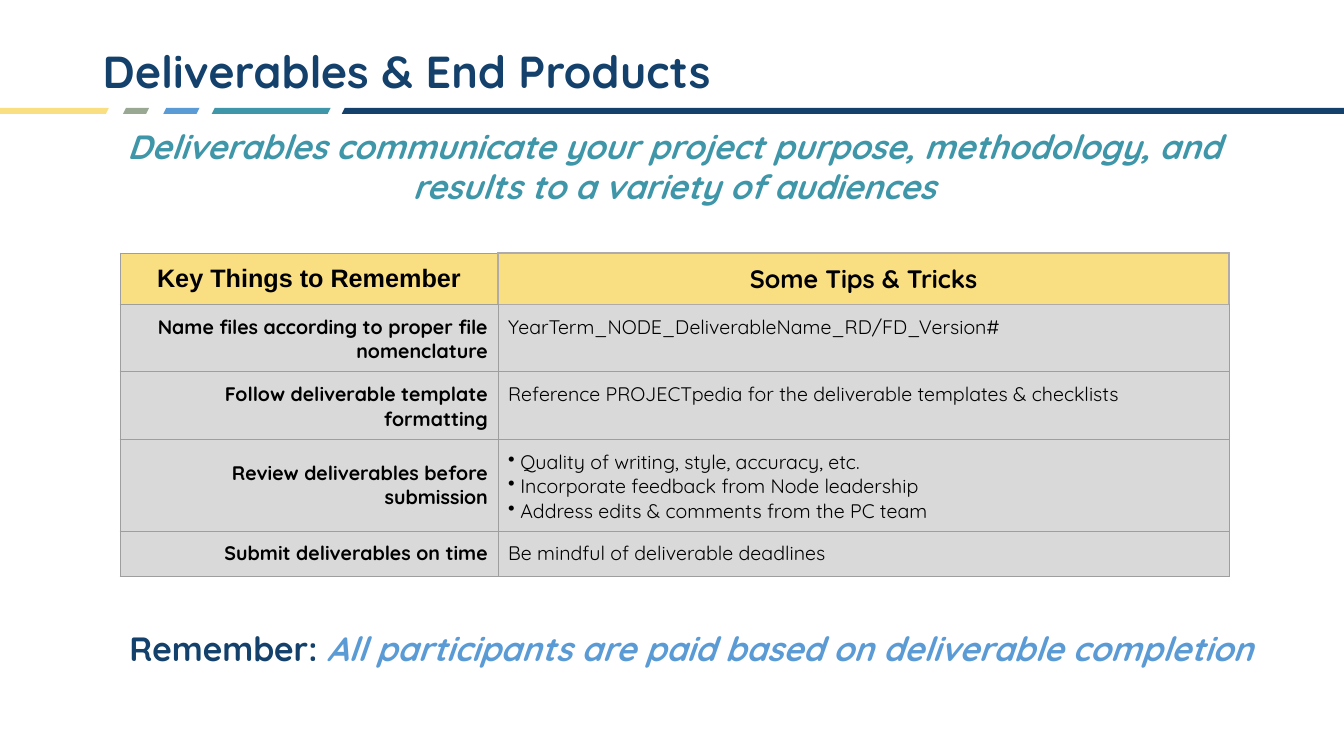
from dataclasses import dataclass

from lxml import etree
from pptx import Presentation
from pptx.dml.color import RGBColor
from pptx.enum.shapes import MSO_SHAPE
from pptx.enum.text import MSO_ANCHOR, PP_ALIGN
from pptx.oxml.ns import qn
from pptx.util import Inches, Pt

LEFT, CENTER, RIGHT = PP_ALIGN.LEFT, PP_ALIGN.CENTER, PP_ALIGN.RIGHT
TOP, MIDDLE = MSO_ANCHOR.TOP, MSO_ANCHOR.MIDDLE
PARALLELOGRAM = MSO_SHAPE.PARALLELOGRAM


@dataclass(frozen=True)
class Theme:
    navy: str = "13416C"
    teal: str = "3E96A8"
    blue: str = "5B9BD5"
    sage: str = "99A893"
    yellow: str = "FADF82"
    gray: str = "D9D9D9"
    black: str = "000000"
    font: str = "Quicksand"
    header_font: str = "Arial"
    title: int = 32
    message: int = 24
    header: int = 18
    body: int = 14
    rule: tuple = ("9E9E9E", 0.75)
    header_rule: tuple = ("AFABAB", 1)


THEME = Theme()

# Content
TITLE = "Deliverables & End Products"
MESSAGE = ("Deliverables communicate your project purpose, methodology, "
           "and results to a variety of audiences")
REMINDER = ("Remember: ", "All participants are paid based on deliverable completion")
HEADERS = [("Key Things to Remember", THEME.header_font),
           ("Some Tips & Tricks", THEME.font)]
# Key thing, its vertical anchor, tips (a list is bulleted)
TIPS = [
    ("Name files according to proper file nomenclature", TOP,
     "YearTerm_NODE_DeliverableName_RD/FD_Version#"),
    ("Follow deliverable template formatting", MIDDLE,
     "Reference PROJECTpedia for the deliverable templates & checklists"),
    ("Review deliverables before submission", MIDDLE,
     ["Quality of writing, style, accuracy, etc.",
      "Incorporate feedback from Node leadership",
      "Address edits & comments from the PC team"]),
    ("Submit deliverables on time", TOP, "Be mindful of deliverable deadlines"),
]

# Layout in inches
SLIDE_W, SLIDE_H = 13.33, 7.5
BAND_TOP, BAND_H = 1.07, 0.06
BAND = [(-0.04, 1.12, THEME.yellow), (1.22, 0.26, THEME.sage),
        (1.62, 0.36, THEME.blue), (2.1, 1.18, THEME.teal),
        (3.39, 9.98, THEME.navy)]
TITLE_BOX = (0.92, 0.4, 11.5, 0.67)
MESSAGE_BOX = (0.96, 1.2, 11.45, 0.91)
REMINDER_BOX = (0.92, 6.18, 11.87, 0.5)
TABLE_LEFT, TABLE_TOP = 1.19, 2.51
COLUMNS = (3.75, 7.25)
ROWS = (0.51, 0.67, 0.67, 0.91, 0.45)
CELL_INSET = 0.1
BULLET_INDENT = 0.12


def style(font, size, color, bold=False, italic=False, name=THEME.font):
    font.name, font.size, font.bold, font.italic = name, Pt(size), bold, italic
    font.color.rgb = RGBColor.from_string(color)


def add_text(slide, box, runs, size, align, anchor=TOP):
    """Add one bold paragraph; runs are (text, color, italic)."""
    frame = slide.shapes.add_textbox(*map(Inches, box)).text_frame
    frame.word_wrap = True
    frame.vertical_anchor = anchor
    paragraph = frame.paragraphs[0]
    paragraph.alignment = align
    for text, color, italic in runs:
        run = paragraph.add_run()
        run.text = text
        style(run.font, size, color, True, italic)
    return paragraph


def set_borders(cell, **rules):
    """Draw the four sides in THEME.rule unless a side is given its own."""
    properties = cell._tc.get_or_add_tcPr()
    for side in "LRTB":
        color, width = rules.get(side, THEME.rule)
        line = etree.SubElement(properties, qn(f"a:ln{side}"), w=str(Pt(width)))
        fill = etree.SubElement(line, qn("a:solidFill"))
        etree.SubElement(fill, qn("a:srgbClr"), val=color)


def add_bullet(paragraph):
    properties = paragraph._p.get_or_add_pPr()
    properties.set("marL", str(Inches(BULLET_INDENT)))
    properties.set("indent", str(-Inches(BULLET_INDENT)))
    etree.SubElement(properties, qn("a:buChar"), char="•")


def fill_cell(cell, content, fill, size, align, anchor, bold, name=THEME.font, **rules):
    set_borders(cell, **rules)
    cell.fill.solid()
    cell.fill.fore_color.rgb = RGBColor.from_string(fill)
    cell.margin_left = cell.margin_right = Inches(CELL_INSET)
    cell.margin_top = cell.margin_bottom = Inches(CELL_INSET)
    cell.vertical_anchor = anchor
    bulleted = isinstance(content, list)
    cell.text_frame.text = "\n".join(content) if bulleted else content
    for paragraph in cell.text_frame.paragraphs:
        paragraph.alignment = align
        if bulleted:
            add_bullet(paragraph)
        for run in paragraph.runs:
            style(run.font, size, THEME.black, bold, name=name)


def add_band(slide):
    for left, width, color in BAND:
        piece = slide.shapes.add_shape(
            PARALLELOGRAM, *map(Inches, (left, BAND_TOP, width, BAND_H)))
        piece.adjustments[0] = 0.5
        piece.shadow.inherit = False
        piece.fill.solid()
        piece.fill.fore_color.rgb = RGBColor.from_string(color)
        piece.line.fill.background()


def add_tips_table(slide):
    table = slide.shapes.add_table(
        len(ROWS), len(COLUMNS),
        *map(Inches, (TABLE_LEFT, TABLE_TOP, sum(COLUMNS), sum(ROWS)))).table
    table.horz_banding = False
    for column, width in zip(table.columns, COLUMNS):
        column.width = Inches(width)
    for row, height in zip(table.rows, ROWS):
        row.height = Inches(height)

    header_sides = ("R", "LRTB")
    for column, (header, name) in enumerate(HEADERS):
        fill_cell(table.cell(0, column), header, THEME.yellow, THEME.header, CENTER,
                  MIDDLE, True, name,
                  **dict.fromkeys(header_sides[column], THEME.header_rule))
    for row, (key, anchor, tips) in enumerate(TIPS, start=1):
        under_header = {"T": THEME.header_rule} if row == 1 else {}
        fill_cell(table.cell(row, 0), key, THEME.gray, THEME.body, RIGHT, anchor, True)
        fill_cell(table.cell(row, 1), tips, THEME.gray, THEME.body, LEFT, TOP, False,
                  **under_header)


def main():
    deck = Presentation()
    deck.slide_width, deck.slide_height = Inches(SLIDE_W), Inches(SLIDE_H)
    slide = deck.slides.add_slide(deck.slide_layouts[6])

    # Title and colour band
    add_band(slide)
    title = add_text(slide, TITLE_BOX, [(TITLE, THEME.navy, False)],
                     THEME.title, LEFT, MIDDLE)
    title.line_spacing = 0.9

    # Message, table and reminder
    add_text(slide, MESSAGE_BOX, [(MESSAGE, THEME.teal, True)], THEME.message, CENTER)
    add_tips_table(slide)
    label, reminder = REMINDER
    add_text(slide, REMINDER_BOX,
             [(label, THEME.navy, False), (reminder, THEME.blue, True)],
             THEME.message, CENTER)
    deck.save("out.pptx")


if __name__ == "__main__":
    main()
